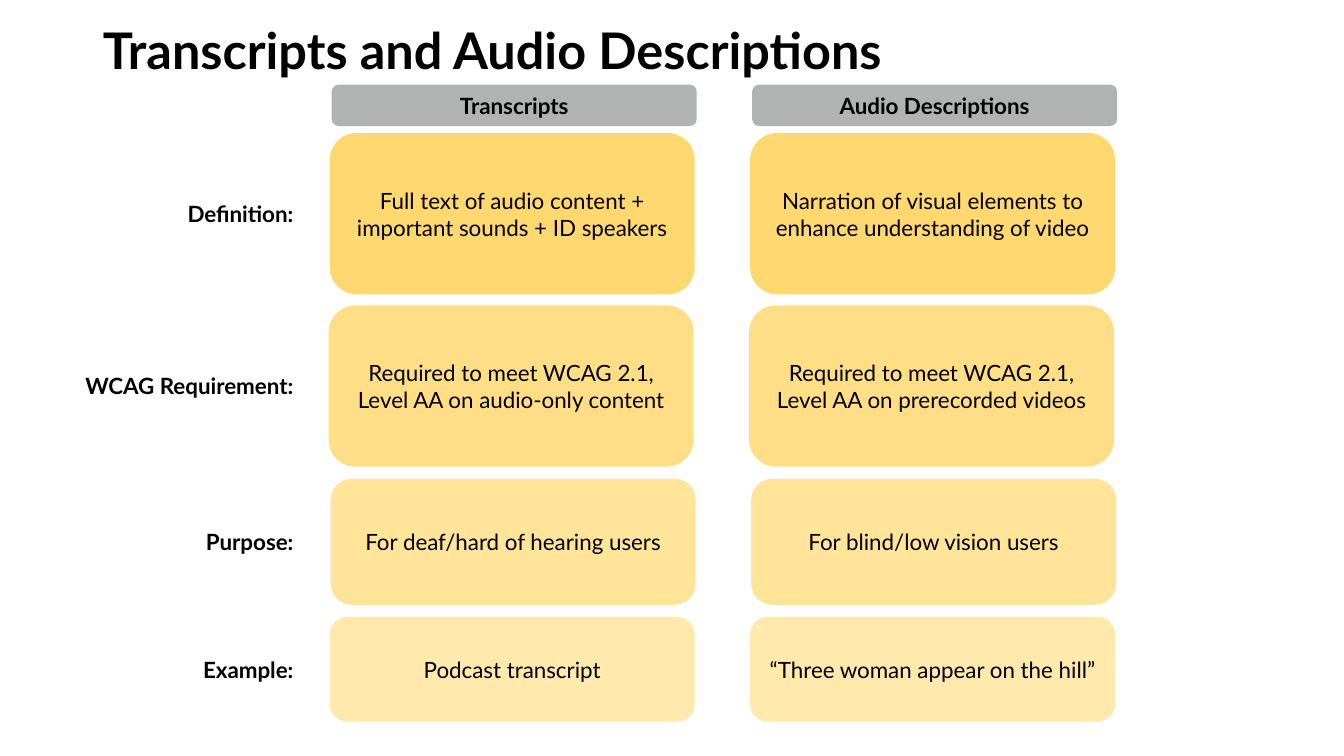
from dataclasses import dataclass

from pptx import Presentation
from pptx.dml.color import RGBColor
from pptx.enum.shapes import MSO_SHAPE
from pptx.enum.text import MSO_ANCHOR, PP_ALIGN
from pptx.slide import Slide
from pptx.text.text import TextFrame
from pptx.util import Inches, Pt


@dataclass(frozen=True)
class Theme:
    font: str = "Lato"
    text: str = "000000"
    header: str = "B0B3B2"
    title_size: int = 36
    body_size: int = 16


@dataclass(frozen=True)
class Row:
    label: str
    cells: tuple[str, str]
    left: float
    top: float
    height: float
    fill: str
    bold: bool = False


THEME = Theme()
LABEL_LEFT, LABEL_WIDTH = 0.71, 2.3
CELL_WIDTH, COLUMN_STEP = 3.62, 4.17

ROWS = (
    Row("", ("Transcripts", "Audio Descriptions"),
        3.29, 0.84, 0.41, THEME.header, True),
    Row("Definition:",
        ("Full text of audio content + important sounds + ID speakers",
         "Narration of visual elements to enhance understanding of video"),
        3.27, 1.32, 1.6, "FFD970"),
    Row("WCAG Requirement:",
        ("Required to meet WCAG 2.1, Level AA on audio-only content",
         "Required to meet WCAG 2.1, Level AA on prerecorded videos"),
        3.26, 3.03, 1.6, "FFDE85"),
    Row("Purpose:",
        ("For deaf/hard of hearing users", "For blind/low vision users"),
        3.28, 4.75, 1.25, "FFE499"),
    Row("Example:",
        ("Podcast transcript", "“Three woman appear on the hill”"),
        3.27, 6.12, 1.04, "FFE9AD"),
)


def write(tf: TextFrame, text: str, align: PP_ALIGN, bold: bool,
          size: int = THEME.body_size) -> None:
    tf.word_wrap = True
    tf.vertical_anchor = MSO_ANCHOR.MIDDLE
    p = tf.paragraphs[0]
    p.alignment = align
    r = p.add_run()
    r.text = text
    r.font.name = THEME.font
    r.font.size = Pt(size)
    r.font.bold = bold
    r.font.color.rgb = RGBColor.from_string(THEME.text)


def add_title(s: Slide, text: str) -> None:
    sp = s.shapes.title
    sp.left, sp.top = Inches(0.92), Inches(0.11)
    sp.width, sp.height = Inches(11.5), Inches(0.83)
    write(sp.text_frame, text, PP_ALIGN.LEFT, True, THEME.title_size)
    sp.text_frame.paragraphs[0].line_spacing = 0.9


def add_label(s: Slide, row: Row) -> None:
    sp = s.shapes.add_textbox(Inches(LABEL_LEFT), Inches(row.top),
                              Inches(LABEL_WIDTH), Inches(row.height))
    write(sp.text_frame, row.label, PP_ALIGN.RIGHT, True)


def add_cells(s: Slide, row: Row) -> None:
    for column, text in enumerate(row.cells):
        sp = s.shapes.add_shape(
            MSO_SHAPE.ROUNDED_RECTANGLE,
            Inches(row.left + column * COLUMN_STEP), Inches(row.top),
            Inches(CELL_WIDTH), Inches(row.height))
        sp.shadow.inherit = False
        sp.fill.solid()
        sp.fill.fore_color.rgb = RGBColor.from_string(row.fill)
        sp.line.fill.background()
        write(sp.text_frame, text, PP_ALIGN.CENTER, row.bold)


def main() -> None:
    prs = Presentation()
    prs.slide_width, prs.slide_height = Inches(13.33), Inches(7.5)
    s = prs.slides.add_slide(prs.slide_layouts[5])
    add_title(s, "Transcripts and Audio Descriptions")
    for row in ROWS:
        if row.label:
            add_label(s, row)
        add_cells(s, row)
    prs.save("out.pptx")


if __name__ == "__main__":
    main()
